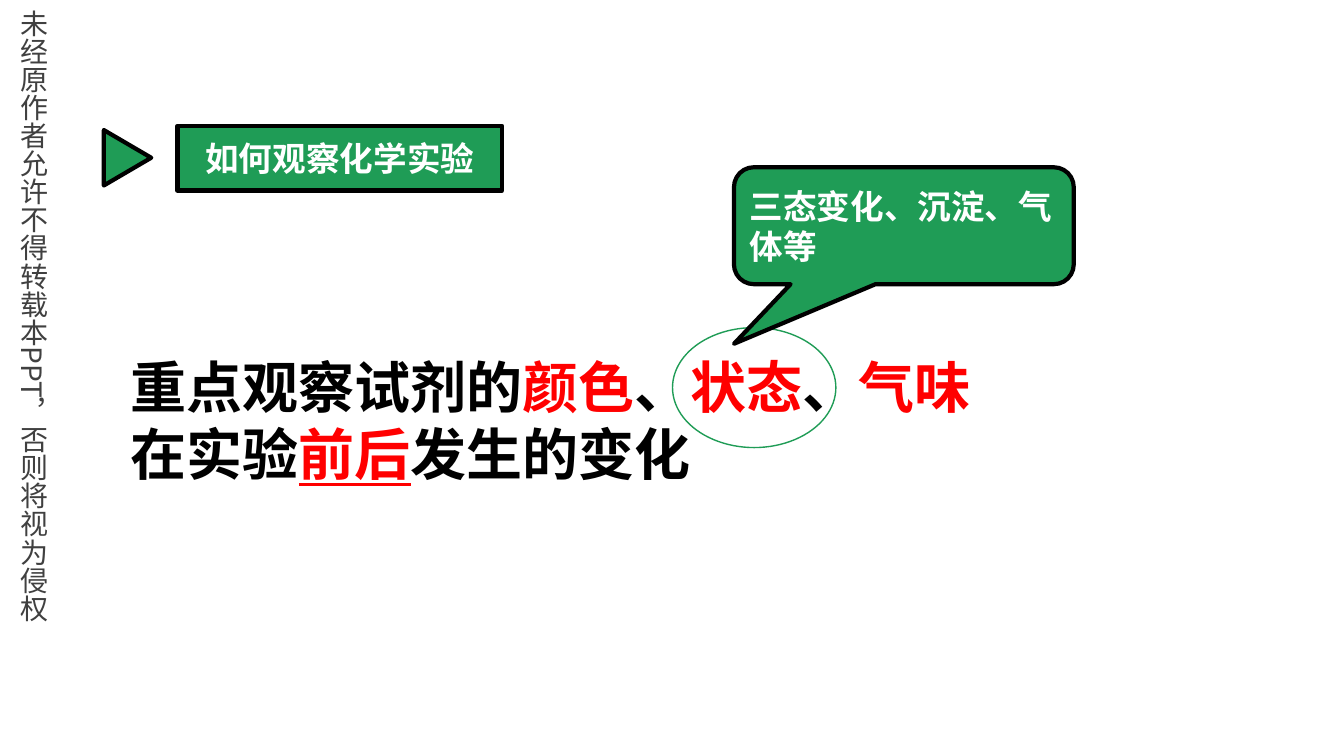
import pptx
import pptx.dml.color
import pptx.enum.shapes
import pptx.enum.text
import pptx.oxml.ns
import pptx.util
from dataclasses import dataclass
from pptx.util import Inches

KIND = pptx.enum.shapes.MSO_SHAPE
ALIGN = pptx.enum.text.PP_ALIGN
ANCHOR = pptx.enum.text.MSO_ANCHOR


@dataclass(frozen=True)
class Theme:
    green: str = "1F9C56"
    red: str = "FF0000"
    black: str = "000000"
    white: str = "FFFFFF"
    grey: str = "404040"
    cjk: str = "Noto Sans CJK SC"
    latin: str = "Arial"
    statement_size: int = 40
    label_size: int = 24
    notice_size: int = 20
    line_pitch: float = 1.2


THEME = Theme()


def rgb(colour):
    return pptx.dml.color.RGBColor.from_string(colour)


def write_text(frame, runs, *, size, font=THEME.cjk, bold=False,
               align=ALIGN.LEFT, anchor=ANCHOR.MIDDLE, spacing=1):
    """Fill a frame with one paragraph of (text, colour, underline) runs."""
    frame.word_wrap = True
    frame.vertical_anchor = anchor
    paragraph = frame.paragraphs[0]
    paragraph.alignment = align
    paragraph.line_spacing = pptx.util.Pt(size * THEME.line_pitch * spacing)
    for text, colour, underline in runs:
        run = paragraph.add_run()
        run.text = text
        run.font.name = font
        run.font.size = pptx.util.Pt(size)
        run.font.bold = bold
        run.font.underline = underline
        run.font.color.rgb = rgb(colour)


def add_text_box(slide, box, runs, **text_format):
    text_box = slide.shapes.add_textbox(*map(Inches, box))
    write_text(text_box.text_frame, runs, **text_format)
    return text_box


def add_figure(slide, kind, box, *, fill=THEME.green, line=THEME.black, width=3):
    figure = slide.shapes.add_shape(kind, *map(Inches, box))
    figure.shadow.inherit = False
    if fill:
        figure.fill.solid()
        figure.fill.fore_color.rgb = rgb(fill)
    else:
        figure.fill.background()
    figure.line.color.rgb = rgb(line)
    figure.line.width = pptx.util.Pt(width)
    return figure


def add_label(slide, kind, box, text, align=ALIGN.LEFT):
    label = add_figure(slide, kind, box)
    frame = label.text_frame
    frame.margin_top = frame.margin_bottom = Inches(0.12)
    write_text(frame, [(text, THEME.white, False)], size=THEME.label_size,
               bold=True, align=align)
    return label


def main():
    deck = pptx.Presentation()
    deck.slide_width, deck.slide_height = Inches(13.33), Inches(7.5)
    slide = deck.slides.add_slide(deck.slide_layouts[6])

    # Vertical notice along the left edge
    notice = add_text_box(
        slide, (0, 0, 0.71, 7.36),
        [("未经原作者允许不得转载本PPT，否则将视为侵权", THEME.grey, False)],
        size=THEME.notice_size, anchor=ANCHOR.TOP, spacing=1.5)
    notice.element.find(".//" + pptx.oxml.ns.qn("a:bodyPr")).set("vert", "eaVert")

    # Key statement
    add_text_box(
        slide, (1.2, 3.44, 8.98, 1.45),
        [("重点观察试剂的", THEME.black, False), ("颜色", THEME.red, False),
         ("、", THEME.black, False), ("状态", THEME.red, False),
         ("、", THEME.black, False), ("气味", THEME.red, False),
         ("在实验", THEME.black, False), ("前后", THEME.red, True),
         ("发生的变化", THEME.black, False)],
        size=THEME.statement_size, font=THEME.latin, bold=True)

    # Heading with its marker
    marker = add_figure(slide, KIND.ISOSCELES_TRIANGLE, (0.99, 1.33, 0.55, 0.47))
    marker.rotation = 90
    add_label(slide, KIND.RECTANGLE, (1.76, 1.25, 3.22, 0.64),
              "如何观察化学实验", ALIGN.CENTER)

    # Ring around the state of matter, and its callout
    add_figure(slide, KIND.OVAL, (6.67, 3.25, 1.62, 1.19),
               fill=None, line=THEME.green, width=1)
    callout = add_label(slide, KIND.ROUNDED_RECTANGULAR_CALLOUT,
                        (7.28, 1.66, 3.37, 1.16), "三态变化、沉淀、气体等")
    for index, value in enumerate((-0.5, 1.01, 0.17)):
        callout.adjustments[index] = value

    deck.save("out.pptx")


if __name__ == "__main__":
    main()
